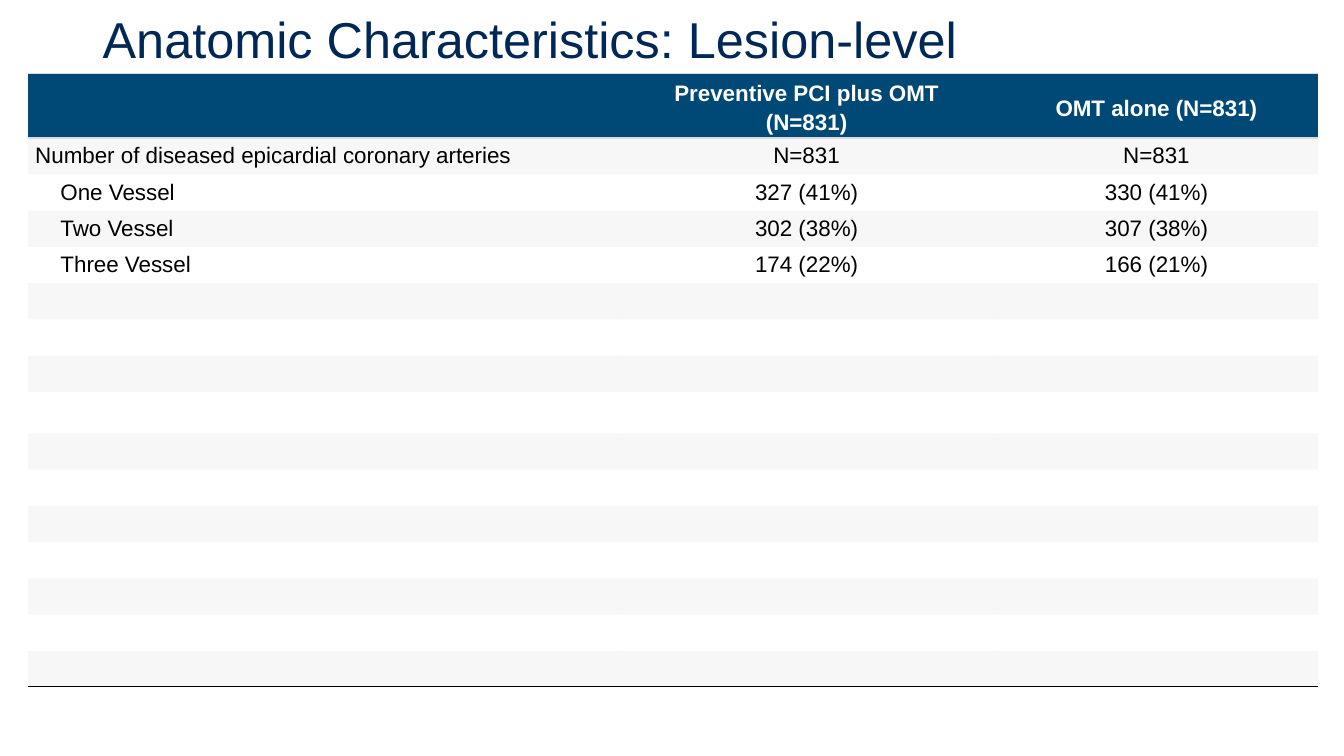
import pptx
import pptx.util
import pptx.dml.color
import pptx.enum.text
import pptx.oxml
import pptx.oxml.ns
from lxml import etree

Inches, Pt = pptx.util.Inches, pptx.util.Pt
RGBColor = pptx.dml.color.RGBColor
PP_ALIGN = pptx.enum.text.PP_ALIGN
MIDDLE = pptx.enum.text.MSO_ANCHOR.MIDDLE
qn = pptx.oxml.ns.qn

TITLE = "Anatomic Characteristics: Lesion-level"
HEADINGS = ("", "Preventive PCI plus OMT (N=831)", "OMT alone (N=831)")
VESSELS = [
    ("Number of diseased epicardial coronary arteries", "N=831", "N=831"),
    ("One Vessel", "327 (41%)", "330 (41%)"),
    ("Two Vessel", "302 (38%)", "307 (38%)"),
    ("Three Vessel", "174 (22%)", "166 (21%)"),
]
EMPTY_ROWS = 11
COLUMN_WIDTHS = (5.85, 3.74, 3.2)
HEADER_HEIGHT, ROW_HEIGHT = 0.44, 0.36
SPECIAL_HEIGHTS = {0: HEADER_HEIGHT, 8: 0.41, 15: 0.35}
TABLE_LEFT, TABLE_TOP = 0.28, 0.73
HEADER_MARGIN, BODY_MARGIN, INDENT = 0.3, 0.07, 0.25

FONT = "Arial"
NAVY = RGBColor(0x00, 0x28, 0x56)
BLUE = RGBColor(0x00, 0x49, 0x77)
GREY = RGBColor(0xDA, 0xDA, 0xDA)
WHITE = RGBColor(0xFF, 0xFF, 0xFF)
BLACK = RGBColor(0x00, 0x00, 0x00)
NO_STYLE = "{2D5ABB26-0587-4C30-8999-92F81FD0307C}"


def style_text(paragraph, size, color, bold=False):
    paragraph.font.name = FONT
    paragraph.font.size = Pt(size)
    paragraph.font.color.rgb = color
    paragraph.font.bold = bold


def set_borders(cell, top, bottom):
    for position, (side, color) in enumerate((("T", top), ("B", bottom))):
        paint = f'<a:solidFill><a:srgbClr val="{color}"/></a:solidFill>' if color else "<a:noFill/>"
        border = pptx.oxml.parse_xml(
            f'<a:ln{side} xmlns:a="http://schemas.openxmlformats.org/drawingml/2006/main" '
            f'w="12700">{paint}</a:ln{side}>')
        cell._tc.get_or_add_tcPr().insert(position, border)


def fill_cell(cell, color, opacity=100):
    cell.fill.solid()
    cell.fill.fore_color.rgb = color
    if opacity < 100:
        swatch = cell._tc.tcPr.find(".//" + qn("a:solidFill") + "/" + qn("a:srgbClr"))
        etree.SubElement(swatch, qn("a:alpha")).set("val", str(opacity * 1000))


def write_cell(cell, text, row, column):
    header = row == 0
    side_margin = HEADER_MARGIN if header else BODY_MARGIN
    indent = INDENT if column == 0 and row > 1 else 0
    cell.margin_left = Inches(side_margin + indent)
    cell.margin_right = Inches(side_margin)
    cell.margin_top = cell.margin_bottom = 0
    cell.vertical_anchor = MIDDLE
    paragraph = cell.text_frame.paragraphs[0]
    paragraph.text = text
    paragraph.alignment = PP_ALIGN.CENTER if column else PP_ALIGN.JUSTIFY
    if header:
        paragraph.line_spacing = 1.2
    style_text(paragraph, 16, WHITE if header else BLACK, header)


def add_title(slide):
    title = slide.shapes.add_textbox(Inches(0.92), Inches(0.01), Inches(11.5), Inches(0.82))
    title.text_frame.word_wrap = True
    title.text_frame.vertical_anchor = MIDDLE
    heading = title.text_frame.paragraphs[0]
    heading.text = TITLE
    heading.line_spacing = 0.9
    style_text(heading, 36, NAVY)


def add_vessel_table(slide):
    rows = [HEADINGS, *VESSELS] + [("", "", "")] * EMPTY_ROWS
    last = len(rows) - 1
    top_colors = {0: GREY, 1: GREY}
    bottom_colors = {0: GREY, last: BLACK}
    heights = [SPECIAL_HEIGHTS.get(row, ROW_HEIGHT) for row in range(len(rows))]
    frame = slide.shapes.add_table(
        len(rows), len(COLUMN_WIDTHS), Inches(TABLE_LEFT), Inches(TABLE_TOP),
        Inches(sum(COLUMN_WIDTHS)), Inches(sum(heights)))
    table = frame.table
    table._tbl.tblPr.find(qn("a:tableStyleId")).text = NO_STYLE
    table.first_row = table.horz_banding = False
    for column, width in enumerate(COLUMN_WIDTHS):
        table.columns[column].width = Inches(width)
    for row, texts in enumerate(rows):
        table.rows[row].height = Inches(heights[row])
        for column, text in enumerate(texts):
            cell = table.cell(row, column)
            write_cell(cell, text, row, column)
            if row == 0:
                fill_cell(cell, BLUE)
            elif row % 2:
                fill_cell(cell, GREY, 20)
            else:
                cell.fill.background()
            set_borders(cell, top_colors.get(row), bottom_colors.get(row))


def main():
    deck = pptx.Presentation()
    deck.slide_width, deck.slide_height = Inches(13.33), Inches(7.5)
    slide = deck.slides.add_slide(deck.slide_layouts[6])
    add_title(slide)
    add_vessel_table(slide)
    deck.save("out.pptx")


if __name__ == "__main__":
    main()
